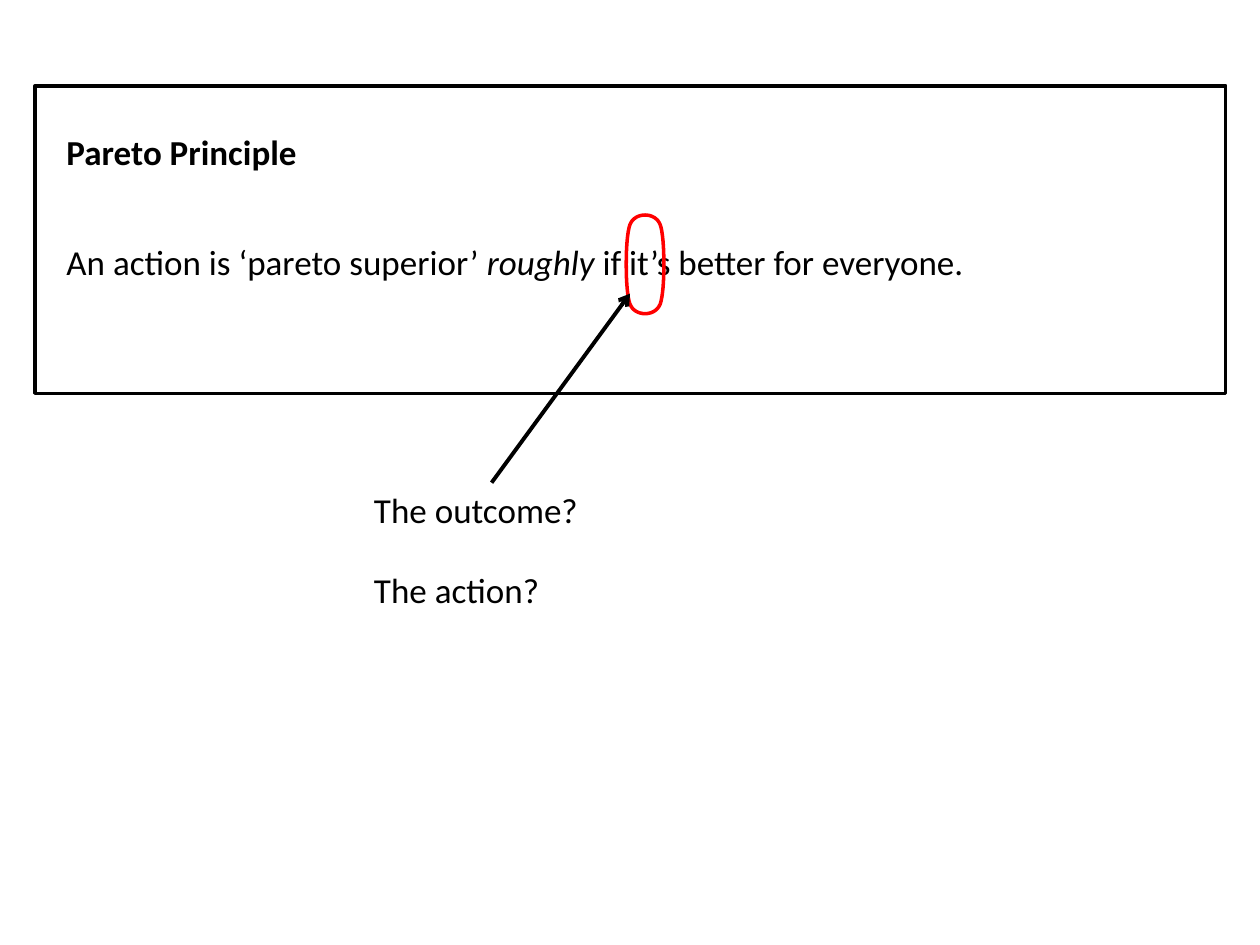
from lxml import etree
from pptx import Presentation, util as u
from pptx.dml.color import RGBColor
from pptx.enum import shapes, text
from pptx.oxml import ns

BLACK = RGBColor(0x00, 0x00, 0x00)
RED = RGBColor(0xFF, 0x00, 0x00)

prs = Presentation()
prs.slide_width, prs.slide_height = u.Cm(25.4), u.Cm(19.05)
s = prs.slides.add_slide(prs.slide_layouts[6])


def add_text(x, y, w, *runs):
    """Add one line of text; each run is (wording, bold, italic)."""
    tb = s.shapes.add_textbox(u.Cm(x), u.Cm(y), u.Cm(w), u.Cm(1.11))
    tf = tb.text_frame
    tf.word_wrap = True
    tf.auto_size = text.MSO_AUTO_SIZE.SHAPE_TO_FIT_TEXT
    for wording, bold, italic in runs:
        r = tf.paragraphs[0].add_run()
        r.text = wording
        r.font.name, r.font.size = "Calibri", u.Pt(20)
        r.font.bold, r.font.italic = bold, italic
        r.font.color.rgb = BLACK


def bezier(p0, p1, p2, p3, steps=16):
    """Points along a cubic curve, without its start, in EMU."""
    points = []
    for i in range(1, steps + 1):
        t = i / steps
        points.append(tuple(
            u.Cm((1 - t) ** 3 * a + 3 * (1 - t) ** 2 * t * b
                 + 3 * (1 - t) * t ** 2 * c + t ** 3 * d)
            for a, b, c, d in zip(p0, p1, p2, p3)))
    return points


# Principle and its definition
add_text(1.09, 2.51, 23.19, ("Pareto Principle", True, False))
add_text(1.09, 4.72, 23.6,
         ("An action is ‘pareto superior’ ", False, False),
         ("roughly", False, True),
         (" if it’s better for everyone.", False, False))

# Frame
sp = s.shapes.add_shape(shapes.MSO_SHAPE.RECTANGLE,
                        u.Cm(0.71), u.Cm(1.73), u.Cm(24), u.Cm(6.2))
sp.shadow.inherit = False
sp.fill.background()
sp.line.color.rgb, sp.line.width = BLACK, u.Pt(2)

# Red ring around "it's"
left, right, top, bottom = 12.7, 13.31, 4.53, 6.13
bulge_x, bulge_y = 0.1, 0.26
corners = [(right, top), (left, top), (left, bottom), (right, bottom)]
handles = [(0, -bulge_y), (-bulge_x, bulge_y), (0, bulge_y), (bulge_x, -bulge_y)]
handles = [
    ((right - bulge_x, top - bulge_y), (left + bulge_x, top - bulge_y)),
    ((left - bulge_x, top + bulge_y), (left - bulge_x, bottom - bulge_y)),
    ((left + bulge_x, bottom + bulge_y), (right - bulge_x, bottom + bulge_y)),
    ((right + bulge_x, bottom - bulge_y), (right + bulge_x, top + bulge_y)),
]
fb = s.shapes.build_freeform(u.Cm(right), u.Cm(top))
for i, (h1, h2) in enumerate(handles):
    fb.add_line_segments(bezier(corners[i], h1, h2, corners[(i + 1) % 4]),
                         close=i == 3)
ring = fb.convert_to_shape()
ring.shadow.inherit = False
ring.fill.background()
ring.line.color.rgb, ring.line.width = RED, u.Pt(2)

# Arrow from the questions to the ring
cn = s.shapes.add_connector(shapes.MSO_CONNECTOR.STRAIGHT,
                            u.Cm(9.91), u.Cm(9.73), u.Cm(12.7), u.Cm(5.92))
cn.line.color.rgb, cn.line.width = BLACK, u.Pt(2.25)
etree.SubElement(cn.line._get_or_add_ln(), ns.qn("a:tailEnd"), type="arrow")
etree.SubElement(cn._element.spPr, ns.qn("a:effectLst"))

# Questions
add_text(7.29, 9.73, 5.41, ("The outcome?", False, False))
add_text(7.29, 11.33, 4.19, ("The action?", False, False))

prs.save("out.pptx")
